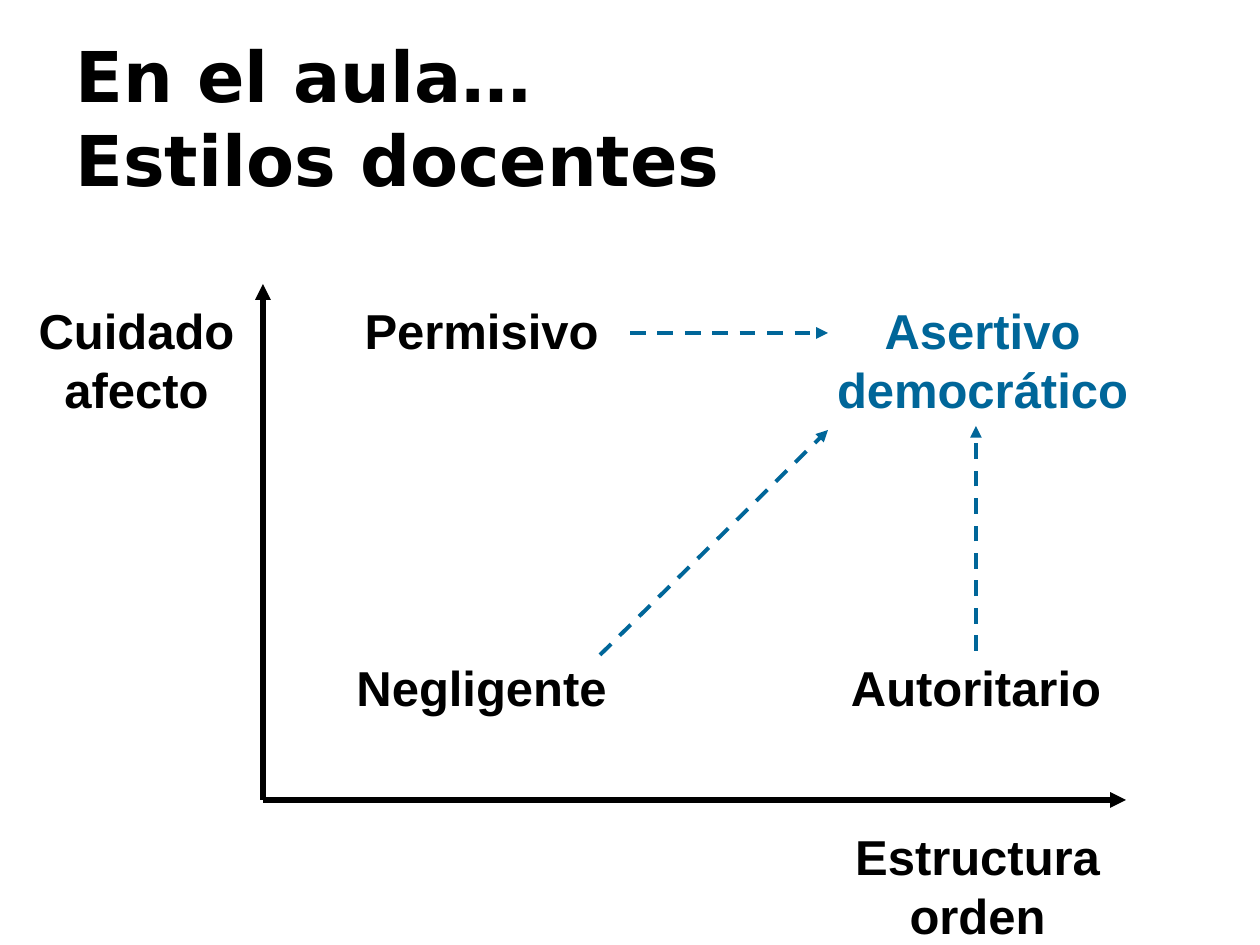
from pptx import Presentation
from pptx.dml.color import RGBColor
from pptx.enum.dml import MSO_LINE_DASH_STYLE as Dash
from pptx.enum.shapes import MSO_CONNECTOR as Conn
from pptx.enum.text import MSO_ANCHOR as Anchor, MSO_AUTO_SIZE as Fit, PP_ALIGN as Align
from pptx.oxml.ns import qn
from pptx.util import Emu, Pt
from lxml import etree

BLACK = RGBColor(0x00, 0x00, 0x00)
BLUE = RGBColor(0x00, 0x66, 0x99)
SCALE = 914400 / 126


def px(*nums):
    return [Emu(round(n * SCALE)) for n in nums]


def style(font, name, size, color):
    looks = {"name": name, "size": Pt(size), "bold": True}
    for key, value in looks.items():
        setattr(font, key, value)
    font.color.rgb = color


prs = Presentation()
prs.slide_width, prs.slide_height = px(1260, 945)
slide = prs.slides.add_slide(prs.slide_layouts[5])

# Title
title = slide.shapes.title
title.left, title.top, title.width, title.height = px(63, 38, 1134, 158)
frame = title.text_frame
frame.text = "En el aula…\vEstilos docentes"
frame.auto_size = Fit.NONE
frame.vertical_anchor = Anchor.MIDDLE
para = frame.paragraphs[0]
para.alignment = Align.LEFT
for run in para.runs:
    style(run.font, "DejaVu Sans", 40, BLACK)

# Axis names and teaching styles: text, left, top, width, color
labels = [
    ("Cuidado\nafecto", 25, 294, 223, BLACK),
    ("Estructura\norden", 829, 820, 297, BLACK),
    ("Autoritario", 828, 651, 296, BLACK),
    ("Negligente", 333, 651, 297, BLACK),
    ("Permisivo", 333, 294, 297, BLACK),
    ("Asertivo\ndemocrático", 799, 294, 367, BLUE),
]
boxes = {}
for text, left, top, width, color in labels:
    height = 131 if "\n" in text else 72
    box = slide.shapes.add_textbox(*px(left, top, width, height))
    frame = box.text_frame
    frame.word_wrap = True
    frame.auto_size = Fit.SHAPE_TO_FIT_TEXT
    frame.text = text
    for para in frame.paragraphs:
        para.alignment = Align.CENTER
        style(para.runs[0].font, "Arial", 28, color)
    boxes[text] = box

# Axes, then dashed paths to the assertive style: ends, color, weight, dash
arrows = [
    ((263, 800, 263, 284), BLACK, 3, None),
    ((263, 800, 1126, 800), BLACK, 3, None),
    ((600, 655, 828, 430), BLUE, 2.25, Dash.DASH),
    ((630, 333, 828, 333), BLUE, 2.25, Dash.DASH),
    ((976, 651, 976, 426), BLUE, 2.25, Dash.DASH),
]
for ends, color, weight, dash in arrows:
    arrow = slide.shapes.add_connector(Conn.STRAIGHT, *px(*ends))
    line = arrow.line
    line.color.rgb = color
    line.width = Pt(weight)
    line.dash_style = dash
    etree.SubElement(line._get_or_add_ln(), qn("a:tailEnd"), type="triangle")
    etree.SubElement(arrow._element.spPr, qn("a:effectLst"))

# The last arrow rises from the top of its style
arrow.begin_connect(boxes["Autoritario"], 0)

prs.save("out.pptx")
